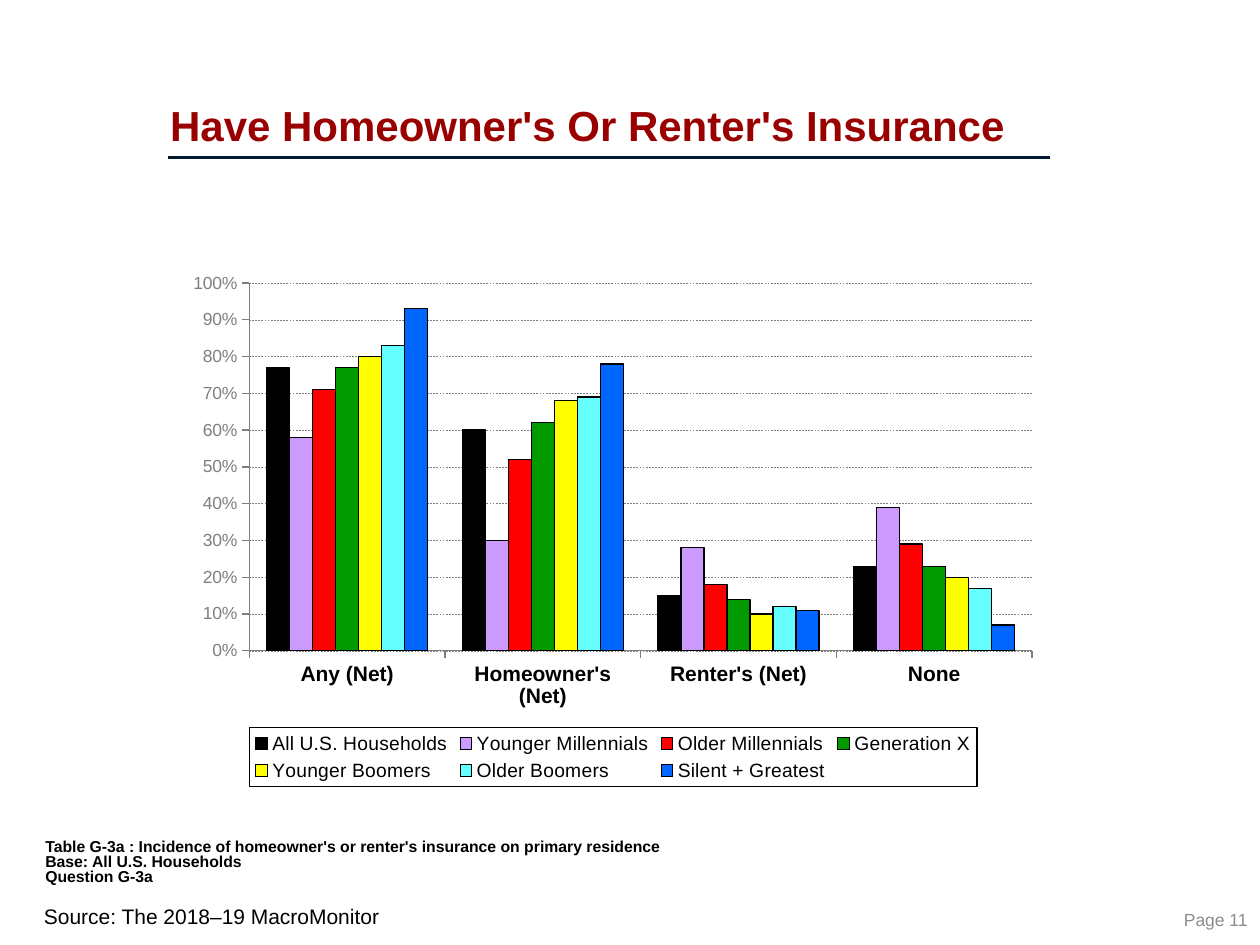
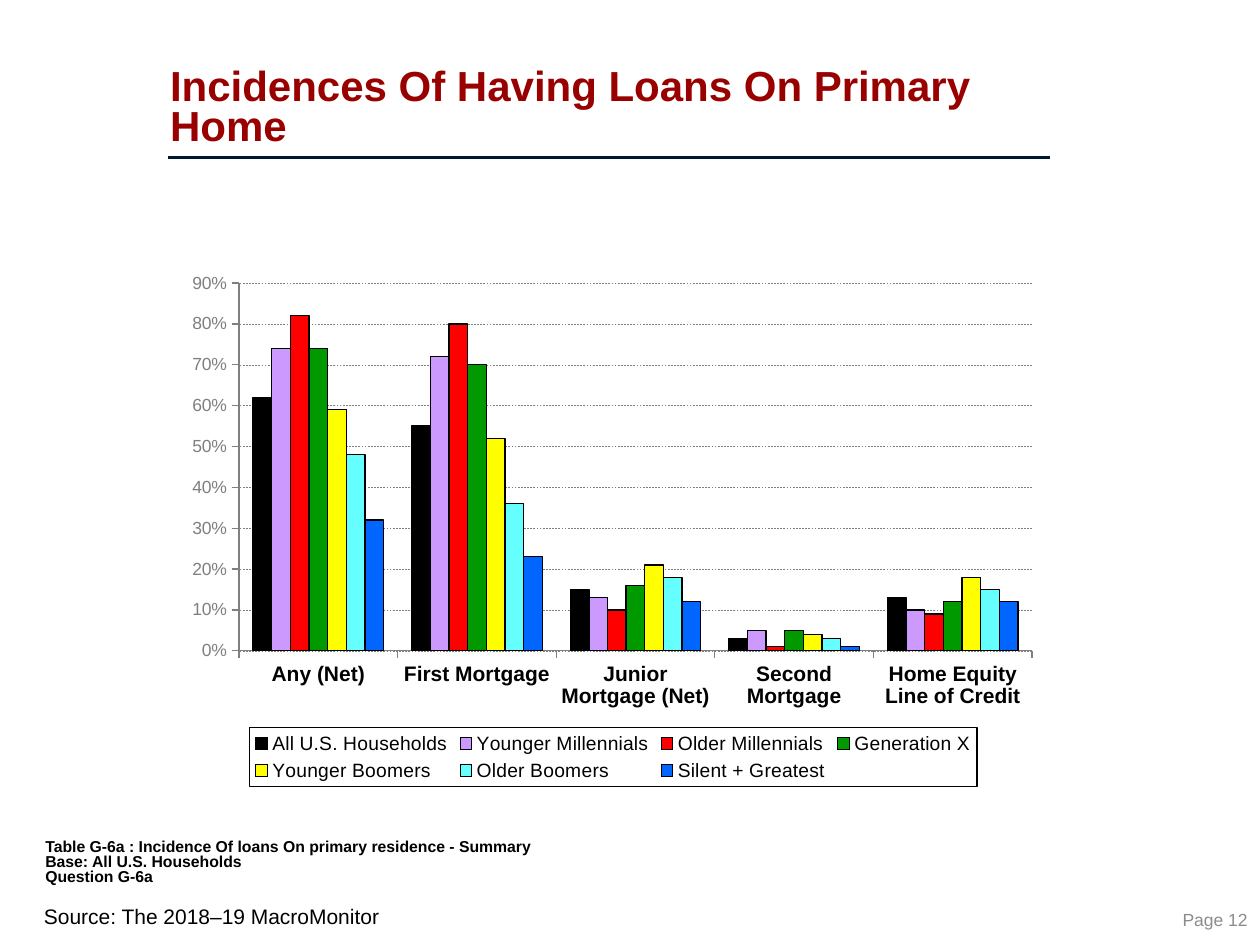
from lxml import etree
from pptx import Presentation, util as u
from pptx.chart.data import CategoryChartData
from pptx.dml.color import RGBColor
from pptx.enum import chart as ch, dml, shapes, text
from pptx.oxml import parse_xml
from pptx.oxml.ns import nsdecls, qn

FONT = "Arial"
BLACK = RGBColor(0x00, 0x00, 0x00)
MAROON = RGBColor(0x99, 0x00, 0x00)
NAVY = RGBColor(0x00, 0x19, 0x2F)
AXIS_GRAY = RGBColor(0x7F, 0x7F, 0x7F)
PAGE_GRAY = RGBColor(0x8C, 0x8C, 0x8C)

GENERATIONS = {
    "All U.S. Households": BLACK,
    "Younger Millennials": RGBColor(0xCC, 0x99, 0xFF),
    "Older Millennials": RGBColor(0xFF, 0x00, 0x00),
    "Generation X": RGBColor(0x00, 0x99, 0x00),
    "Younger Boomers": RGBColor(0xFF, 0xFF, 0x00),
    "Older Boomers": RGBColor(0x66, 0xFF, 0xFF),
    "Silent + Greatest": RGBColor(0x00, 0x66, 0xFF),
}

SOURCE = "Source: The 2018–19 MacroMonitor"
PLOT_RIGHT = 0.98

# Incidence rows follow the order of GENERATIONS; columns follow the categories.
PAGES = [
    dict(
        page=11,
        title="Have Homeowner's Or Renter's Insurance",
        table="Table G-3a : Incidence of homeowner's or renter's insurance on primary residence",
        question="Question G-3a",
        categories=["Any (Net)", "Homeowner's (Net)", "Renter's (Net)", "None"],
        incidence=[
            [0.77, 0.60, 0.15, 0.23],
            [0.58, 0.30, 0.28, 0.39],
            [0.71, 0.52, 0.18, 0.29],
            [0.77, 0.62, 0.14, 0.23],
            [0.80, 0.68, 0.10, 0.20],
            [0.83, 0.69, 0.12, 0.17],
            [0.93, 0.78, 0.11, 0.07],
        ],
        top_value=1.0,
        plot_left=0.085,
    ),
    dict(
        page=12,
        title="Incidences Of Having Loans On Primary Home",
        table="Table G-6a : Incidence Of loans On primary residence - Summary",
        question="Question G-6a",
        categories=["Any (Net)", "First Mortgage", "Junior Mortgage (Net)",
                    "Second Mortgage", "Home Equity Line of Credit"],
        incidence=[
            [0.62, 0.55, 0.15, 0.03, 0.13],
            [0.74, 0.72, 0.13, 0.05, 0.10],
            [0.82, 0.80, 0.10, 0.01, 0.09],
            [0.74, 0.70, 0.16, 0.05, 0.12],
            [0.59, 0.52, 0.21, 0.04, 0.18],
            [0.48, 0.36, 0.18, 0.03, 0.15],
            [0.32, 0.23, 0.12, 0.01, 0.12],
        ],
        top_value=0.9,
        plot_left=0.073,
    ),
]


def inches(*lengths):
    return [u.Inches(length) for length in lengths]


def set_font(font, size, color=BLACK, bold=False):
    for key, value in dict(name=FONT, size=u.Pt(size), bold=bold).items():
        setattr(font, key, value)
    font.color.rgb = color


def set_line(line, color, width):
    line.color.rgb = color
    line.width = u.Pt(width)


def write(shape, words, size, color=BLACK, bold=False, align=text.PP_ALIGN.LEFT,
          anchor=text.MSO_ANCHOR.TOP, insets=(0.1, 0.05, 0.1, 0.05), spacing=1.0):
    frame = shape.text_frame
    frame.text = words
    frame_format = dict(word_wrap=True, auto_size=text.MSO_AUTO_SIZE.NONE,
                        vertical_anchor=anchor)
    sides = ("margin_left", "margin_top", "margin_right", "margin_bottom")
    frame_format.update(zip(sides, inches(*insets)))
    for key, value in frame_format.items():
        setattr(frame, key, value)
    paragraph = frame.paragraphs[0]
    paragraph.alignment = align
    paragraph.line_spacing = spacing
    for run in paragraph.runs:
        set_font(run.font, size, color, bold)


def add_words(slide, box, words, size, **style):
    write(slide.shapes.add_textbox(*inches(*box)), words, size, **style)


def add_heading(slide, words):
    title = slide.shapes.title
    title.left, title.top, title.width, title.height = inches(1.35, 0.53, 7.01, 0.71)
    write(title, words, 24, MAROON, bold=True, anchor=text.MSO_ANCHOR.BOTTOM,
          insets=(0, 0, 0, 0.05), spacing=0.8)
    rule = slide.shapes.add_connector(shapes.MSO_CONNECTOR.STRAIGHT,
                                      *inches(1.33, 1.25, 8.33, 1.25))
    set_line(rule.line, NAVY, 2)
    etree.SubElement(rule.line._get_or_add_ln().getparent(), qn("a:effectLst"))


def add_notes_and_footer(slide, table, question, page):
    add_words(slide, (0.25, 7.12, 8.92, 0.3), SOURCE, 12)
    add_words(slide, (0.32, 6.6, 8.7, 0.5),
              "\v".join([table, "Base: All U.S. Households", question]), 9, bold=True,
              anchor=text.MSO_ANCHOR.MIDDLE, insets=(0.04, 0.13, 0, 0.13), spacing=0.8)
    add_words(slide, (9.26, 7.16, 0.74, 0.27), f"Page {page}", 10, color=PAGE_GRAY,
              align=text.PP_ALIGN.RIGHT, anchor=text.MSO_ANCHOR.MIDDLE)


def place_in_chart(part, index, left, top, width, height, inner=False):
    """Fix a chart part's place, given as shares of the chart's size."""
    for old in part.findall(qn("c:layout")):
        part.remove(old)
    target = '<c:layoutTarget val="inner"/>' if inner else ""
    modes = '<c:xMode val="edge"/><c:yMode val="edge"/>'
    sizes = "".join(f'<c:{key} val="{value:.3f}"/>'
                    for key, value in zip("xywh", (left, top, width, height)))
    part.insert(index, parse_xml(
        f'<c:layout {nsdecls("c")}><c:manualLayout>{target}{modes}{sizes}'
        '</c:manualLayout></c:layout>'))


def format_axes(chart, top_value):
    for axis, size, color, bold in ((chart.category_axis, 12, BLACK, True),
                                    (chart.value_axis, 10, AXIS_GRAY, False)):
        axis.major_tick_mark = ch.XL_TICK_MARK.OUTSIDE
        axis.minor_tick_mark = ch.XL_TICK_MARK.NONE
        set_font(axis.tick_labels.font, size, color, bold)
        set_line(axis.format.line, AXIS_GRAY, 0.75)
    share = chart.value_axis
    for key, value in dict(minimum_scale=0, maximum_scale=top_value, major_unit=0.1,
                           has_major_gridlines=True).items():
        setattr(share, key, value)
    share.tick_labels.number_format = "0%"
    share.tick_labels.number_format_is_linked = False
    grid = share.major_gridlines.format.line
    set_line(grid, AXIS_GRAY, 0.25)
    grid.dash_style = dml.MSO_LINE.DASH


def add_boxed_legend(chart):
    chart.has_legend = True
    legend = chart.legend
    legend.position = ch.XL_LEGEND_POSITION.BOTTOM
    legend.include_in_layout = False
    set_font(legend.font, 11)
    legend_xml = chart._chartSpace.chart.find(qn("c:legend"))
    place_in_chart(legend_xml, 1, 0.085, 0.886, 0.832, 0.112)
    legend_xml.find(qn("c:txPr")).addprevious(parse_xml(
        f'<c:spPr {nsdecls("c", "a")}><a:ln w="{u.Pt(0.75)}"><a:solidFill>'
        f'<a:srgbClr val="{BLACK}"/></a:solidFill></a:ln></c:spPr>'))


def add_incidence_chart(slide, categories, incidence, top_value, plot_left):
    data = CategoryChartData(number_format="0%")
    data.categories = categories
    for generation, shares in zip(GENERATIONS, incidence):
        data.add_series(generation, shares)
    chart = slide.shapes.add_chart(ch.XL_CHART_TYPE.COLUMN_CLUSTERED,
                                   *inches(1.39, 2.08, 6.94, 4.17), data).chart
    chart.has_title = False
    set_font(chart.font, 10)
    plot = chart.plots[0]
    plot.vary_by_categories = False
    plot.gap_width, plot.overlap = 150, 0
    for series, color in zip(plot.series, GENERATIONS.values()):
        series.format.fill.solid()
        series.format.fill.fore_color.rgb = color
        set_line(series.format.line, BLACK, 0.75)
    format_axes(chart, top_value)
    add_boxed_legend(chart)
    place_in_chart(chart._chartSpace.chart.plotArea, 0, plot_left, 0.04,
                   PLOT_RIGHT - plot_left, 0.7, inner=True)


def main():
    deck = Presentation()
    deck.slide_width, deck.slide_height = inches(10, 7.5)
    title_only = deck.slide_layouts[5]
    for content in PAGES:
        slide = deck.slides.add_slide(title_only)
        add_heading(slide, content["title"])
        add_incidence_chart(slide, content["categories"], content["incidence"],
                            content["top_value"], content["plot_left"])
        add_notes_and_footer(slide, content["table"], content["question"], content["page"])
    deck.save("out.pptx")


if __name__ == "__main__":
    main()
